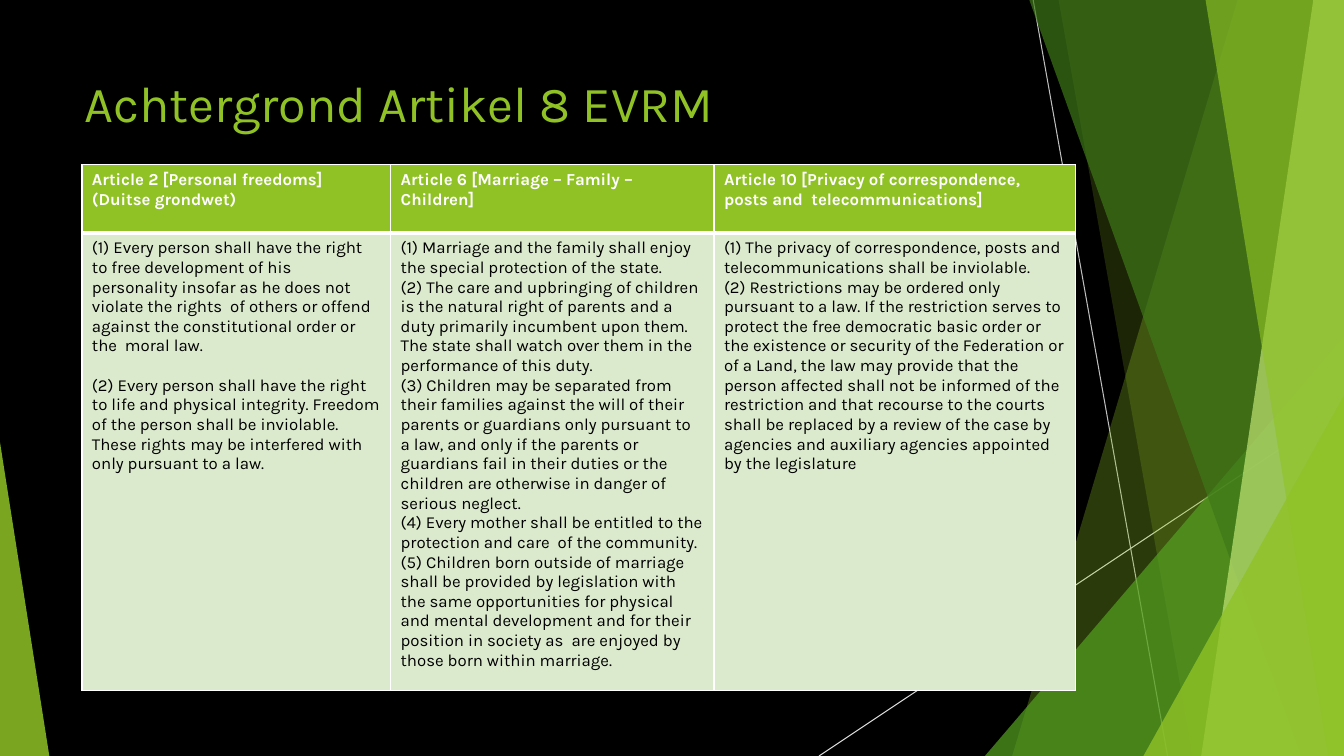
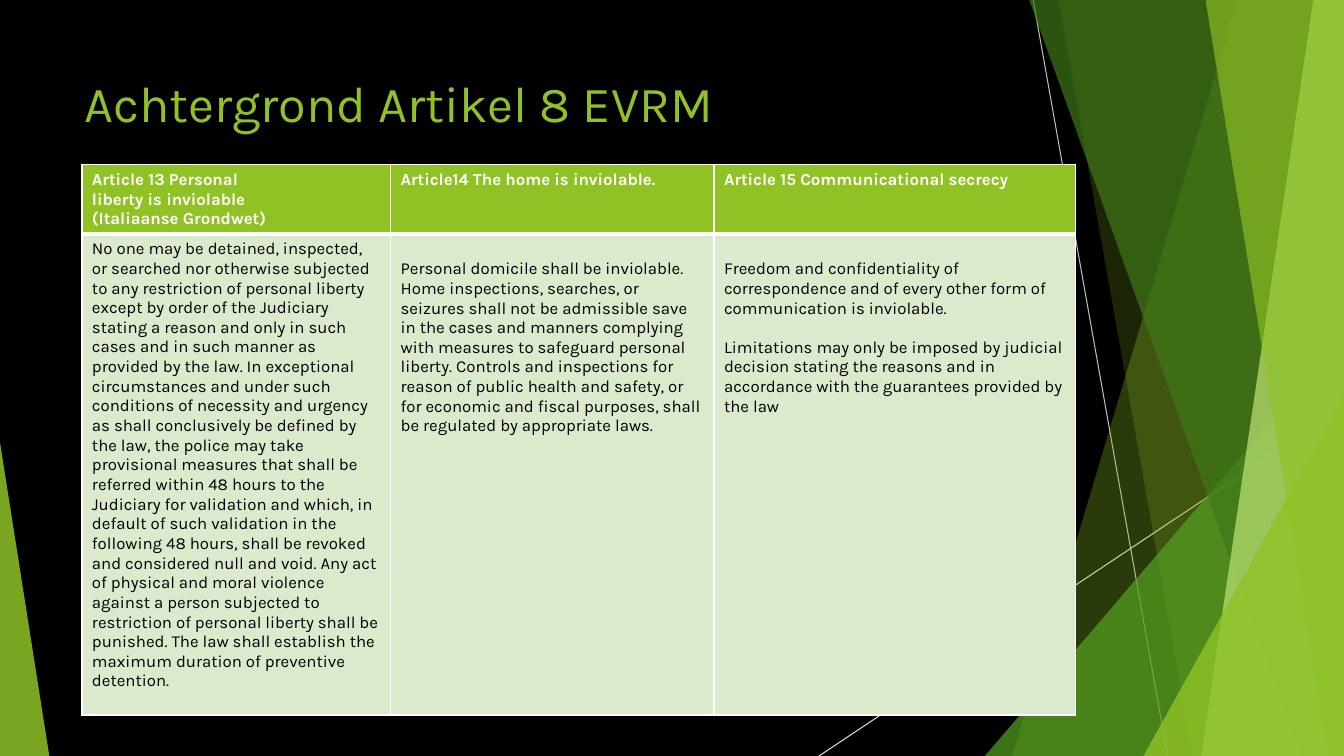
from dataclasses import dataclass
from lxml import etree
from pptx import Presentation
from pptx import util as u
from pptx.dml.color import RGBColor
from pptx.enum import shapes, text
from pptx.oxml.ns import qn

PX = 9525
WIDE, HIGH = 1280, 720


@dataclass(frozen=True)
class Theme:
    font: str = "Karla"
    back: str = "000000"
    lime: str = "90C226"
    green: str = "54A021"
    dark: str = "3F7819"
    pale: str = "C0E474"
    ray: str = "BFBFBF"
    beam: str = "D9D9D9"
    mint: str = "DBE9CD"
    white: str = "FFFFFF"
    ink: str = "000000"
    head: int = 36
    body: int = 12


def rgb(code):
    return RGBColor.from_string(code)


def write(frame, lines, size, color, font, bold=False, gap=0):
    frame.word_wrap = True
    for i, line in enumerate(lines):
        para = frame.paragraphs[0] if i == 0 else frame.add_paragraph()
        para.alignment = text.PP_ALIGN.LEFT
        para.space_before = u.Pt(gap if i else 0)
        run = para.add_run()
        run.text = line
        run.font.name = font
        run.font.size = u.Pt(size)
        run.font.bold = bold
        run.font.color.rgb = rgb(color)


class Deck:
    def __init__(self, theme):
        self.look = theme
        self.prs = Presentation()
        self.prs.slide_width = WIDE * PX
        self.prs.slide_height = HIGH * PX
        self.base = self.prs.slide_layouts.get_by_name("Title Only")
        fill = self.base.background.fill
        fill.solid()
        fill.fore_color.rgb = rgb(theme.back)
        self.slide = None

    def start(self, title):
        self.slide = self.prs.slides.add_slide(self.base)
        head = self.slide.shapes.title
        head.left, head.top, head.width, head.height = (n * PX for n in (71, 64, 902, 138))
        frame = head.text_frame
        frame.auto_size = text.MSO_AUTO_SIZE.NONE
        frame.vertical_anchor = text.MSO_ANCHOR.TOP
        write(frame, [title], self.look.head, self.look.lime, self.look.font)

    def share(self, item):
        self.base.shapes._spTree.append(item._element)

    def line(self, x1, y1, x2, y2, color):
        item = self.slide.shapes.add_connector(
            shapes.MSO_CONNECTOR.STRAIGHT, x1 * PX, y1 * PX, x2 * PX, y2 * PX)
        item.line.color.rgb = rgb(color)
        item.line.width = u.Pt(0.75)
        etree.SubElement(item._element.spPr, qn("a:effectLst"))
        self.share(item)

    def paint(self, item, color, alpha):
        item.shadow.inherit = False
        item.line.fill.background()
        item.fill.solid()
        item.fill.fore_color.rgb = rgb(color)
        tint = item._element.spPr.find(qn("a:solidFill"))[0]
        etree.SubElement(tint, qn("a:alpha"), val=str(alpha * 1000))
        self.share(item)

    def shard(self, top, foot, color, alpha):
        pen = self.slide.shapes.build_freeform(top, -1, scale=PX)
        pen.add_line_segments([(WIDE, -1), (WIDE, HIGH), (foot, HIGH)], close=True)
        self.paint(pen.convert_to_shape(), color, alpha)

    def wedge(self, x, y, wide, peak, color, alpha):
        item = self.slide.shapes.add_shape(
            shapes.MSO_SHAPE.ISOSCELES_TRIANGLE,
            x * PX, y * PX, wide * PX, (HIGH - y) * PX)
        item.adjustments[0] = peak
        self.paint(item, color, alpha)

    def scene(self):
        t = self.look
        self.line(984, 0, 1112, HIGH, t.ray)
        self.line(WIDE, 387, 780, HIGH, t.beam)
        self.shard(1179, 964, t.lime, 30)
        self.shard(1008, 1136, t.lime, 20)
        self.wedge(938, 320, 342, 1, t.green, 72)
        self.shard(980, 1239, t.dark, 70)
        self.shard(1251, 1144, t.pale, 70)
        self.shard(1148, 1265, t.lime, 65)
        self.wedge(1089, 377, 191, 1, t.lime, 80)
        self.wedge(0, 421, 47, 0, t.lime, 85)

    def edge(self, cell, **widths):
        props = cell._tc.get_or_add_tcPr()
        for side in "LRTB":
            ln = etree.SubElement(
                props, qn("a:ln" + side), w=str(u.Pt(widths.get(side, 1))))
            fill = etree.SubElement(ln, qn("a:solidFill"))
            etree.SubElement(fill, qn("a:srgbClr"), val=self.look.white)

    def cell(self, cell, lines, fill, color, bold=False, gap=0, drop=0, **widths):
        self.edge(cell, **widths)
        cell.fill.solid()
        cell.fill.fore_color.rgb = rgb(fill)
        cell.margin_top = (5 + drop) * PX
        write(cell.text_frame, lines, self.look.body, color, self.look.font, bold, gap)

    def table(self, heads, texts, deep, gap=0, drops=(0, 0, 0)):
        t = self.look
        cols, rows = (294, 308, 344), (65, deep)
        grid = self.slide.shapes.add_table(
            2, 3, 78 * PX, 157 * PX, sum(cols) * PX, sum(rows) * PX).table
        grid.horz_banding = False
        for row, high in zip(grid.rows, rows):
            row.height = high * PX
        for i, wide in enumerate(cols):
            grid.columns[i].width = wide * PX
            self.cell(grid.cell(0, i), heads[i], t.lime, t.white, bold=True, B=3)
            self.cell(grid.cell(1, i), texts[i], t.mint, t.ink,
                      gap=gap if len(texts[i]) == 2 and i != 1 and (drops[i] or i == 0) else 0,
                      drop=drops[i], T=3)


TITLE = "Achtergrond Artikel 8 EVRM"

GERMAN = dict(
    heads=[
        ["Article 2 [Personal freedoms] (Duitse grondwet)"],
        ["Article 6 [Marriage – Family – Children]"],
        ["Article 10 [Privacy of correspondence, posts and  telecommunications]"],
    ],
    texts=[
        ["(1) Every person shall have the right to free development of his personality "
         "insofar as he does not violate the rights  of others or offend against the "
         "constitutional order or the  moral law.",
         "(2) Every person shall have the right to life and physical integrity. Freedom "
         "of the person shall be inviolable. These rights may be interfered with only "
         "pursuant to a law."],
        ["(1) Marriage and the family shall enjoy the special protection of the state.",
         "(2) The care and upbringing of children is the natural right of parents and a "
         "duty primarily incumbent upon them. The state shall watch over them in the "
         "performance of this duty.",
         "(3) Children may be separated from their families against the will of their "
         "parents or guardians only pursuant to a law, and only if the parents or "
         "guardians fail in their duties or the children are otherwise in danger of "
         "serious neglect.",
         "(4) Every mother shall be entitled to the protection and care  of the community.",
         "(5) Children born outside of marriage shall be provided by legislation with the "
         "same opportunities for physical and mental development and for their position "
         "in society as  are enjoyed by those born within marriage."],
        ["(1) The privacy of correspondence, posts and telecommunications shall be "
         "inviolable.",
         "(2) Restrictions may be ordered only pursuant to a law. If the restriction "
         "serves to protect the free democratic basic order or the existence or security "
         "of the Federation or of a Land, the law may provide that the person affected "
         "shall not be informed of the restriction and that recourse to the courts shall "
         "be replaced by a review of the case by agencies and auxiliary agencies "
         "appointed by the legislature"],
    ],
    deep=436, gap=14,
)

ITALIAN = dict(
    heads=[
        ["Article 13 Personal", "liberty is inviolable", "(Italiaanse Grondwet)"],
        ["Article14 The home is inviolable."],
        ["Article 15 Communicational secrecy"],
    ],
    texts=[
        ["No one may be detained, inspected, or searched nor otherwise subjected to any "
         "restriction of personal liberty except by order of the Judiciary stating a "
         "reason and only in such cases and in such manner as provided by the law. In "
         "exceptional circumstances and under such conditions of necessity and urgency "
         "as shall conclusively be defined by the law, the police may take provisional "
         "measures that shall be referred within 48 hours to the Judiciary for "
         "validation and which, in default of such validation in the following 48 hours, "
         "shall be revoked and considered null and void. Any act of physical and moral "
         "violence against a person subjected to restriction of personal liberty shall "
         "be punished. The law shall establish the maximum duration of preventive "
         "detention."],
        ["Personal domicile shall be inviolable. Home inspections, searches, or seizures "
         "shall not be admissible save in the cases and manners complying with measures "
         "to safeguard personal liberty. Controls and inspections for reason of public "
         "health and safety, or for economic and fiscal purposes, shall be regulated by "
         "appropriate laws."],
        ["Freedom and confidentiality of correspondence and of every other form of "
         "communication is inviolable.",
         "Limitations may only be imposed by judicial decision stating the reasons and "
         "in accordance with the guarantees provided by the law"],
    ],
    deep=458, gap=14, drops=(0, 19, 19),
)


def main():
    deck = Deck(Theme())
    for i, law in enumerate((GERMAN, ITALIAN)):
        deck.start(TITLE)
        if i == 0:
            deck.scene()
        deck.table(**law)
    deck.prs.save("out.pptx")


if __name__ == "__main__":
    main()
